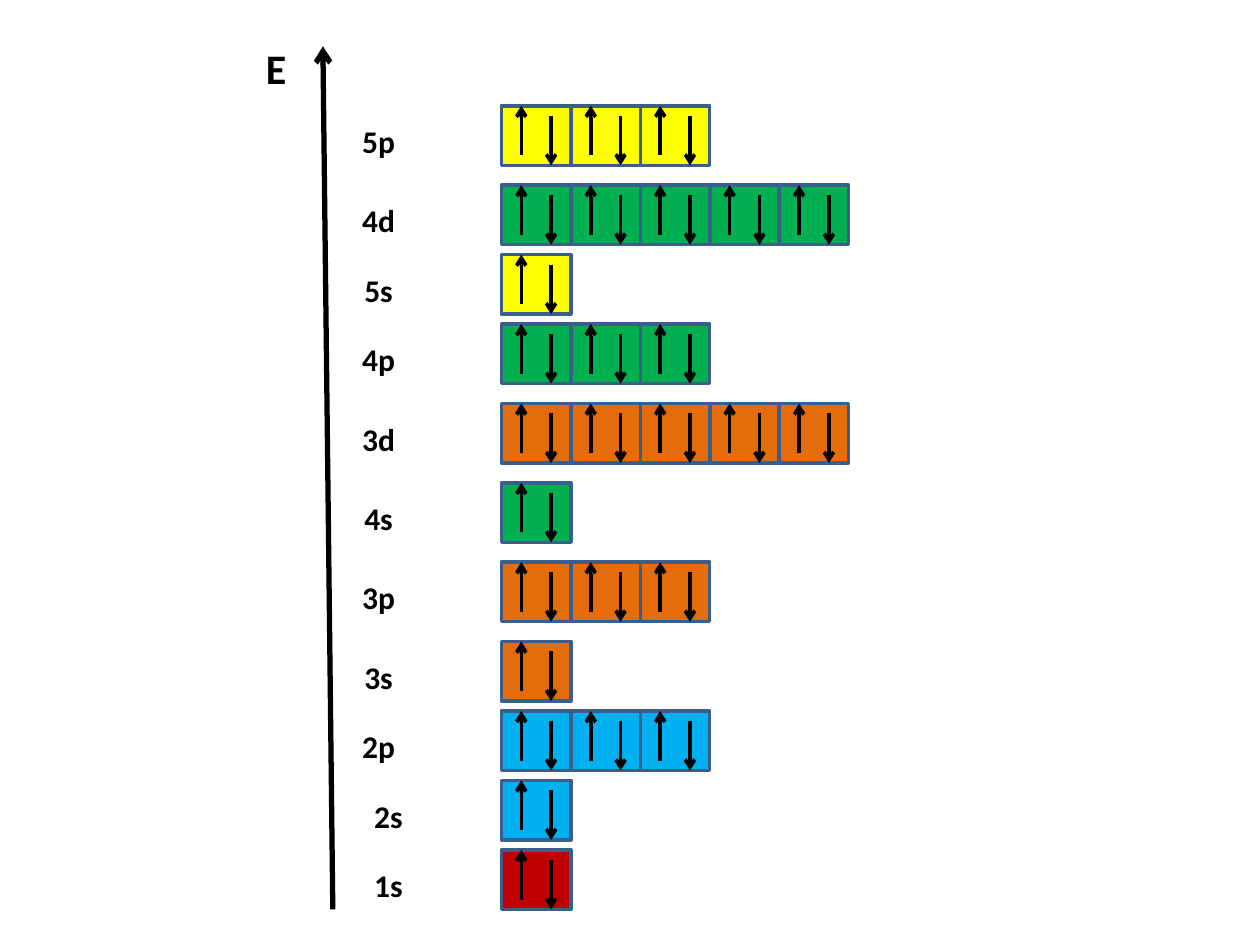
from dataclasses import dataclass

from lxml import etree
from pptx import Presentation
from pptx.dml.color import RGBColor
from pptx.enum.shapes import MSO_CONNECTOR, MSO_SHAPE
from pptx.enum.text import MSO_AUTO_SIZE, PP_ALIGN
from pptx.oxml.ns import qn
from pptx.util import Inches, Pt

RECTANGLE = MSO_SHAPE.RECTANGLE
STRAIGHT = MSO_CONNECTOR.STRAIGHT
FIT_TEXT = MSO_AUTO_SIZE.SHAPE_TO_FIT_TEXT
LEFT, CENTER = PP_ALIGN.LEFT, PP_ALIGN.CENTER


@dataclass(frozen=True)
class Theme:
    font: str = "Calibri"
    label_size: float = 18
    axis_size: float = 24
    ink: str = "000000"
    box_edge: str = "3A5F8C"
    line_width: float = 2
    axis_width: float = 3
    # Fill of each electron shell, by principal quantum number
    shells: tuple = ("C00000", "00B0F0", "E46C0A", "00B050", "FFFF00")


@dataclass(frozen=True)
class Subshell:
    name: str
    row: int
    label_column: int = -18

    @property
    def orbitals(self) -> int:
        return {"s": 1, "p": 3, "d": 5}[self.name[1]]

    @property
    def fill(self) -> str:
        return THEME.shells[int(self.name[0]) - 1]


THEME = Theme()

# The grid has 2 mm steps; its origin is the top left corner of the 5p boxes.
STEP = 0.2 / 2.54
ORIGIN_X, ORIGIN_Y = 3.98, 0.84
BOX_COLUMNS, BOX_ROWS = 7, 6
SPIN_UP_COLUMN, SPIN_DOWN_COLUMN, SPIN_ROWS = 2, 5, 5

SUBSHELLS = (
    Subshell("5p", 0),
    Subshell("4d", 8),
    Subshell("5s", 15),
    Subshell("4p", 22),
    Subshell("3d", 30),
    Subshell("4s", 38),
    Subshell("3p", 46),
    Subshell("3s", 54),
    Subshell("2p", 61),
    Subshell("2s", 68, label_column=-17),
    Subshell("1s", 75, label_column=-17),
)


def x_at(column: float) -> int:
    return Inches(ORIGIN_X + column * STEP)


def y_at(row: float) -> int:
    return Inches(ORIGIN_Y + row * STEP)


def add_text(slide, text: str, column: float, row: float, *, width: float,
             height: float, size: float, align=LEFT, wrap: bool = True) -> None:
    frame = slide.shapes.add_textbox(
        x_at(column), y_at(row), Inches(width), Inches(height)).text_frame
    frame.word_wrap = wrap
    frame.auto_size = FIT_TEXT
    paragraph = frame.paragraphs[0]
    paragraph.alignment = align
    run = paragraph.add_run()
    run.text = text
    run.font.name = THEME.font
    run.font.size = Pt(size)
    run.font.bold = True
    run.font.color.rgb = RGBColor.from_string(THEME.ink)


def add_arrow(slide, start: tuple[float, float], end: tuple[float, float],
              width: float = THEME.line_width) -> None:
    """Draw an arrow between two (column, row) points, its head at the end."""
    arrow = slide.shapes.add_connector(
        STRAIGHT, x_at(start[0]), y_at(start[1]), x_at(end[0]), y_at(end[1]))
    arrow.line.color.rgb = RGBColor.from_string(THEME.ink)
    arrow.line.width = Pt(width)
    etree.SubElement(arrow.line._get_or_add_ln(), qn("a:tailEnd"), type="arrow")
    etree.SubElement(arrow._element.spPr, qn("a:effectLst"))


def add_orbital_box(slide, column: int, row: int, fill: str) -> None:
    box = slide.shapes.add_shape(
        RECTANGLE, x_at(column), y_at(row),
        Inches(BOX_COLUMNS * STEP), Inches(BOX_ROWS * STEP))
    box.shadow.inherit = False
    box.fill.solid()
    box.fill.fore_color.rgb = RGBColor.from_string(fill)
    box.line.color.rgb = RGBColor.from_string(THEME.box_edge)
    box.line.width = Pt(THEME.line_width)


def add_spin_pair(slide, column: int, row: int) -> None:
    up, down = column + SPIN_UP_COLUMN, column + SPIN_DOWN_COLUMN
    add_arrow(slide, (down, row + 1), (down, row + 1 + SPIN_ROWS))
    add_arrow(slide, (up, row + SPIN_ROWS), (up, row))


def add_subshell(slide, subshell: Subshell) -> None:
    columns = [i * BOX_COLUMNS for i in reversed(range(subshell.orbitals))]
    for column in columns:
        add_orbital_box(slide, column, subshell.row, subshell.fill)
    for column in columns:
        add_spin_pair(slide, column, subshell.row)
    add_text(slide, f"{subshell.name} ", subshell.label_column, subshell.row + 1,
             width=0.94, height=0.4, size=THEME.label_size, align=CENTER)


def add_energy_axis(slide) -> None:
    add_arrow(slide, (-17, 81), (-18, -6), THEME.axis_width)
    add_text(slide, "E", -25, -7, width=0.31, height=0.5,
             size=THEME.axis_size, wrap=False)


def main() -> None:
    deck = Presentation()
    deck.slide_width, deck.slide_height = Inches(10), Inches(7.5)
    blank_layout = deck.slide_layouts[6]
    slide = deck.slides.add_slide(blank_layout)
    for subshell in SUBSHELLS:
        add_subshell(slide, subshell)
    add_energy_axis(slide)
    deck.save("out.pptx")


if __name__ == "__main__":
    main()
